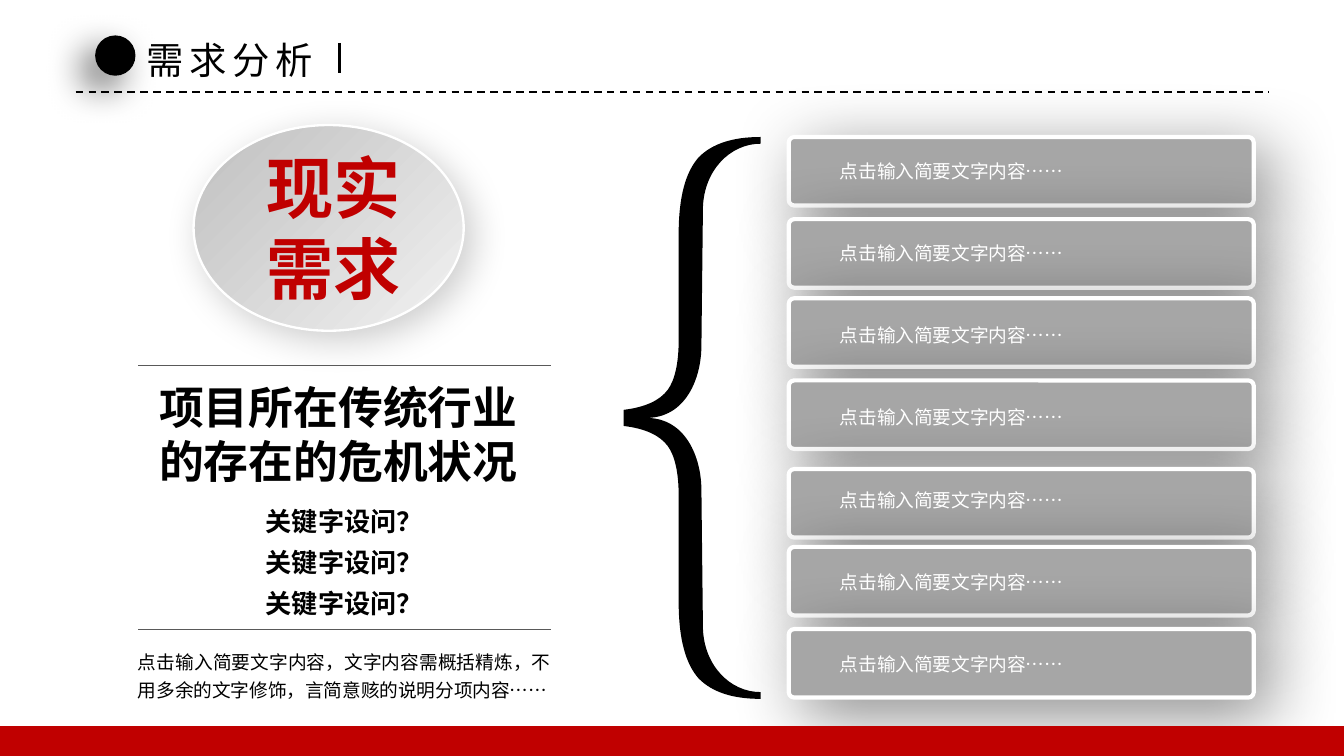
from lxml.etree import SubElement
from pptx import Presentation
from pptx.dml.color import RGBColor
from pptx.enum.dml import MSO_LINE
from pptx.enum.shapes import MSO_CONNECTOR, MSO_SHAPE
from pptx.enum.text import MSO_AUTO_SIZE as AutoSize, PP_ALIGN as Align
from pptx.oxml.ns import qn
from pptx.util import Pt

FONT = "Noto Sans CJK SC"
BLACK = RGBColor(0x00, 0x00, 0x00)
WHITE = RGBColor(0xFF, 0xFF, 0xFF)
RED = RGBColor(0xC0, 0x00, 0x00)
RULE_GRAY = RGBColor(0x59, 0x59, 0x59)
PANEL_GRAY = RGBColor(0xA6, 0xA6, 0xA6)
BADGE_DARK = RGBColor(0xBF, 0xBF, 0xBF)
BADGE_LIGHT = RGBColor(0xF2, 0xF2, 0xF2)

PANEL_TOPS = [73.4, 117.4, 159.8, 203.8, 251.3, 293, 337]
BRACE_MIDDLE = 223.9
# Cubic curves of the brace's upper half, each edge running from top to tip.
BRACE_INNER = [
    [(407.5, 77), (391, 77), (377.3, 91.4), (376.6, 110.9)],
    [(375.8, 185), (375.8, 203), (367.2, 223.9), (346.3, 223.9)],
]
BRACE_OUTER = [
    [(407.5, 73.4), (392.4, 73.4), (381.6, 77), (374.4, 84.2)],
    [(374.4, 84.2), (367.2, 92.2), (363.6, 105.8), (363.6, 125.3)],
    [(363.6, 182.2), (363.6, 195.1), (361.4, 203.8), (357.8, 208.8)],
    [(357.8, 208.8), (353.5, 214.6), (345.6, 218.2), (334.1, 219.6)],
]


def add_shadow(shape, opacity, blur, distance, angle):
    effects = shape._element.spPr.find(qn("a:effectLst"))
    shadow = SubElement(effects, qn("a:outerShdw"), blurRad=str(Pt(blur)),
                        dist=str(Pt(distance)), dir=str(angle * 60000),
                        algn="ctr", rotWithShape="0")
    color = SubElement(shadow, qn("a:srgbClr"), val=str(BLACK))
    SubElement(color, qn("a:alpha"), val=str(opacity * 1000))


def style(shape, fill=None, line=None, line_width=0):
    shape.shadow.inherit = False
    if fill is not None:
        shape.fill.solid()
        shape.fill.fore_color.rgb = fill
    if line is None:
        shape.line.fill.background()
    else:
        shape.line.color.rgb = line
        shape.line.width = Pt(line_width)


def add_preset(slide, kind, left, top, width, height, **look):
    shape = slide.shapes.add_shape(kind, Pt(left), Pt(top), Pt(width), Pt(height))
    style(shape, **look)
    return shape


def add_line(slide, x1, y1, x2, y2, color, width, dash=None):
    line = slide.shapes.add_connector(
        MSO_CONNECTOR.STRAIGHT, Pt(x1), Pt(y1), Pt(x2), Pt(y2))
    line.line.color.rgb = color
    line.line.width = Pt(width)
    if dash is not None:
        line.line.dash_style = dash
    SubElement(line._element.spPr, qn("a:effectLst"))


def add_text(slide, text, left, top, width, height, size, color=BLACK, bold=False,
             align=Align.JUSTIFY, leading=None, margin=0, wrap=True, tracking=0):
    box = slide.shapes.add_textbox(Pt(left), Pt(top), Pt(width), Pt(height))
    frame = box.text_frame
    frame.margin_left = frame.margin_right = Pt(2 * margin)
    frame.margin_top = frame.margin_bottom = Pt(margin)
    frame.word_wrap = wrap
    frame.auto_size = AutoSize.SHAPE_TO_FIT_TEXT
    paragraph = frame.paragraphs[0]
    run = paragraph.add_run()
    run.text = text
    paragraph.alignment = align
    paragraph.line_spacing = Pt(leading or 1.2 * size)
    # East Asian glyphs take their typeface from a:ea on the run.
    run.font.name = FONT
    run.font.size = Pt(size)
    run.font.bold = bold
    run.font.color.rgb = color
    properties = run._r.get_or_add_rPr()
    SubElement(properties, qn("a:ea"), typeface=FONT)
    if tracking:
        properties.set("spc", str(tracking * 100))


def mirror(curves):
    return [[(x, 2 * BRACE_MIDDLE - y) for x, y in curve] for curve in curves]


def backwards(curves):
    return [curve[::-1] for curve in curves[::-1]]


def add_curved_outline(slide, curves):
    """Closed outline of cubic curves, with straight lines across the gaps."""
    points, handles = [], []
    for start, *rest in curves:
        if not points or points[-1] != start:
            points.append(start)
        handles.append(len(points) - 1)
        points += rest
    tenths = [(10 * x, 10 * y) for x, y in points]
    builder = slide.shapes.build_freeform(*tenths[0], scale=Pt(0.1))
    builder.add_line_segments(tenths[1:], close=True)
    shape = builder.convert_to_shape()
    segments = list(shape._element.iter(qn("a:lnTo")))
    for first in handles:
        curve, *others = segments[first:first + 3]
        curve.tag = qn("a:cubicBezTo")
        for other in others:
            curve.append(other[0])
            other.getparent().remove(other)
    return shape


def add_brace(slide):
    brace = add_curved_outline(
        slide, BRACE_INNER + backwards(mirror(BRACE_INNER))
        + mirror(BRACE_OUTER) + backwards(BRACE_OUTER))
    style(brace, fill=BLACK)


def add_panels(slide):
    for top in PANEL_TOPS:
        panel = add_preset(slide, MSO_SHAPE.ROUNDED_RECTANGLE, 422.6, top, 249.1, 36.7,
                           fill=PANEL_GRAY, line=WHITE, line_width=2.25)
        panel.adjustments[0] = 0.08
        add_shadow(panel, 45, 38, 11, 45)


def add_panel_labels(slide):
    for row in range(len(PANEL_TOPS)):
        add_text(slide, "点击输入简要文字内容……", 450, 85.7 + 44 * row, 182.2, 12.2,
                 10, color=WHITE)


def add_badge(slide):
    badge = add_preset(slide, MSO_SHAPE.OVAL, 103.7, 67, 144.7, 110.2,
                       line=WHITE, line_width=1.25)
    badge.fill.gradient()
    badge.fill.gradient_angle = 315
    for stop, position, color in zip(badge.fill.gradient_stops, (0, 1),
                                     (BADGE_DARK, BADGE_LIGHT)):
        stop.position = position
        stop.color.rgb = color
    add_shadow(badge, 20, 20, 6, 45)
    add_text(slide, "现实需求", 129.2, 78.5, 99.4, 87.1, 36, color=RED, bold=True,
             align=Align.CENTER)


def add_summary(slide):
    for y in (195.8, 337.4):
        add_line(slide, 74.2, y, 295.2, y, RULE_GRAY, 0.5)
    add_text(slide, "项目所在传统行业的存在的危机状况", 85.3, 203.5, 198.7, 58.3, 24,
             bold=True, align=Align.LEFT)
    for row in range(3):
        add_text(slide, "关键字设问？", 122.2, 270.7 + 21.9 * row, 124.6, 17.3, 14,
                 bold=True, align=Align.CENTER)
    add_text(slide, "点击输入简要文字内容，文字内容需概括精炼，不用多余的文字修饰，"
             "言简意赅的说明分项内容……", 73.9, 345.6, 221.1, 28.8, 10, leading=15)


def add_header(slide):
    add_line(slide, 40.5, 49.2, 679.5, 49.2, BLACK, 1, MSO_LINE.DASH)
    dot = add_preset(slide, MSO_SHAPE.OVAL, 51, 19, 21.6, 21.6, fill=BLACK)
    add_shadow(dot, 60, 20, 10, 135)
    add_text(slide, "需求分析", 71.3, 16.6, 107.3, 31.7, 20, align=Align.LEFT,
             margin=3.6, wrap=False, tracking=3)
    add_line(slide, 181.7, 23, 181.7, 38.9, BLACK, 1.5)


def main():
    deck = Presentation()
    deck.slide_width, deck.slide_height = Pt(720), Pt(405)
    slide = deck.slides.add_slide(deck.slide_layouts[6])
    add_panels(slide)
    add_badge(slide)
    add_summary(slide)
    add_brace(slide)
    add_panel_labels(slide)
    add_header(slide)
    add_preset(slide, MSO_SHAPE.RECTANGLE, 0, 389, 720, 17, fill=RED)
    deck.save("out.pptx")


if __name__ == "__main__":
    main()
